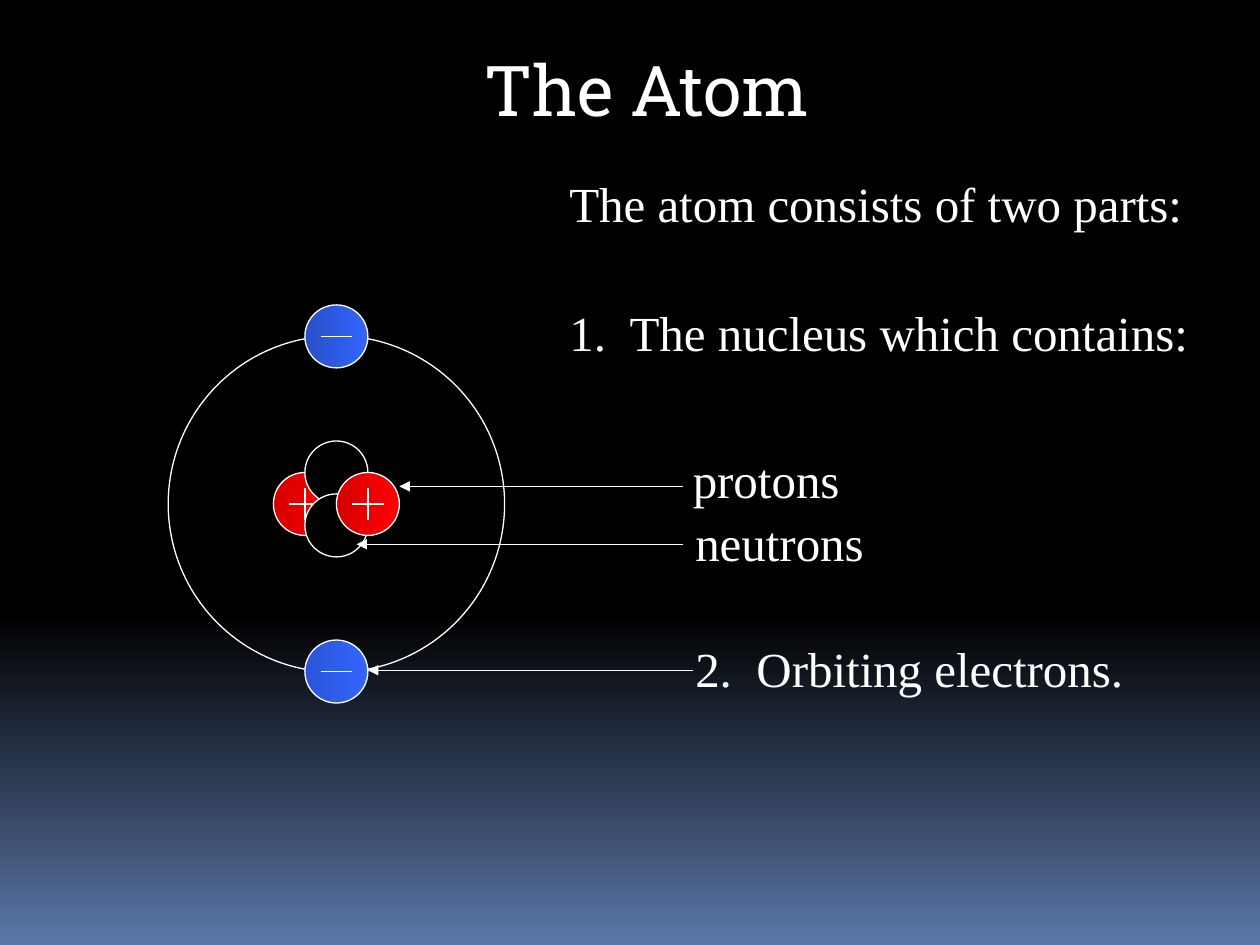
import copy
import lxml.etree
import pptx
import pptx.dml.color
import pptx.enum.shapes
import pptx.enum.text
import pptx.oxml.ns
import pptx.util

Inches = pptx.util.Inches
COLORS = {
    "white": "FFFFFF",
    "black": "000000",
    "sky": "5B77A8",
    "crimson": "D50000",
    "red": "FF0000",
    "navy": "284FC6",
    "cobalt": "2B55D5",
    "blue": "3366FF",
}
SIZE = 0.5
MARK = 0.25
MID = 2.67


def tint(name):
    return pptx.dml.color.RGBColor.from_string(COLORS[name])


def blend(fill, start, end, angle=0):
    fill.gradient()
    fill.gradient_angle = angle
    for stop, name, place in zip(fill.gradient_stops, (start, end), (0, 1)):
        stop.color.rgb = tint(name)
        stop.position = place


def paint_sky(slide):
    blend(slide.background.fill, "black", "sky", 270)
    stops = next(slide.element.iter(pptx.oxml.ns.qn("a:gsLst")))
    middle = copy.deepcopy(stops[0])
    middle.set("pos", "65000")
    stops.insert(1, middle)


def draw_line(shapes, start, end, arrow=False):
    points = [Inches(n) for n in (*start, *end)]
    line = shapes.add_connector(pptx.enum.shapes.MSO_CONNECTOR.STRAIGHT, *points)
    line.line.color.rgb = tint("white")
    line.line.width = pptx.util.Pt(0.75)
    qn = pptx.oxml.ns.qn
    if arrow:
        pen = line.line._get_or_add_ln()
        lxml.etree.SubElement(pen, qn("a:tailEnd"), type="triangle")
    lxml.etree.SubElement(line.element.spPr, qn("a:effectLst"))


def draw_ball(shapes, x, y, size=SIZE, colors=()):
    ball = shapes.add_shape(
        pptx.enum.shapes.MSO_SHAPE.OVAL,
        Inches(x - size / 2), Inches(y - size / 2), Inches(size), Inches(size),
    )
    ball.shadow.inherit = False
    ball.line.color.rgb = tint("white")
    ball.line.width = pptx.util.Pt(0.75)
    if len(colors) == 2:
        blend(ball.fill, *colors)
    elif colors:
        ball.fill.solid()
        ball.fill.fore_color.rgb = tint(colors[0])
    else:
        ball.fill.background()


def draw_minus(shapes, x, y):
    draw_line(shapes, (x - MARK / 2, y), (x + MARK / 2, y))


def draw_proton(shapes, x, y):
    draw_ball(shapes, x, y, colors=("crimson", "red"))
    draw_line(shapes, (x, y - MARK / 2), (x, y + MARK / 2))
    draw_minus(shapes, x, y)


def draw_core(slide):
    shapes = slide.shapes.add_group_shape().shapes
    draw_proton(shapes, MID - SIZE / 2, 4)
    for y in (3.75, 4.17):
        draw_ball(shapes, MID, y, colors=("black",))
    draw_proton(shapes, MID + SIZE / 2, 4)


def draw_orbit(slide):
    shapes = slide.shapes.add_group_shape().shapes
    draw_ball(shapes, MID, 4, 2.67)
    for y, shade in ((2.67, "navy"), (5.33, "cobalt")):
        draw_ball(shapes, MID, y, colors=(shade, "blue"))
        draw_minus(shapes, MID, y)


def add_text(slide, words, x, y, w, h=0.57, size=28, font="Times New Roman", wrap=False):
    box = slide.shapes.add_textbox(Inches(x), Inches(y), Inches(w), Inches(h))
    frame = box.text_frame
    frame.word_wrap = wrap
    frame.auto_size = pptx.enum.text.MSO_AUTO_SIZE.SHAPE_TO_FIT_TEXT
    run = frame.paragraphs[0].add_run()
    run.text = words
    run.font.size = pptx.util.Pt(size)
    run.font.name = font
    run.font.color.rgb = tint("white")


def main():
    deck = pptx.Presentation()
    deck.slide_width, deck.slide_height = Inches(10), Inches(7.5)
    slide = deck.slides.add_slide(deck.slide_layouts[6])
    paint_sky(slide)
    draw_core(slide)
    draw_orbit(slide)
    add_text(slide, "The Atom", 3.75, 0.32, 2.8, 0.77, 40, "Roboto Slab")
    add_text(slide, "The atom consists of two parts:", 4.42, 1.33, 5.07)
    add_text(slide, "1.  The nucleus which contains:", 4.42, 2.35, 5.25, wrap=True)
    add_text(slide, "protons", 5.4, 3.52, 1.37)
    add_text(slide, "neutrons", 5.42, 4.02, 1.54)
    add_text(slide, "2.  Orbiting electrons.", 5.42, 5.02, 3.6)
    for start, end, y in ((5.42, 3.17, 3.86), (5.42, 2.83, 4.32), (5.5, 2.92, 5.32)):
        draw_line(slide.shapes, (start, y), (end, y), arrow=True)
    deck.save("out.pptx")


main()
